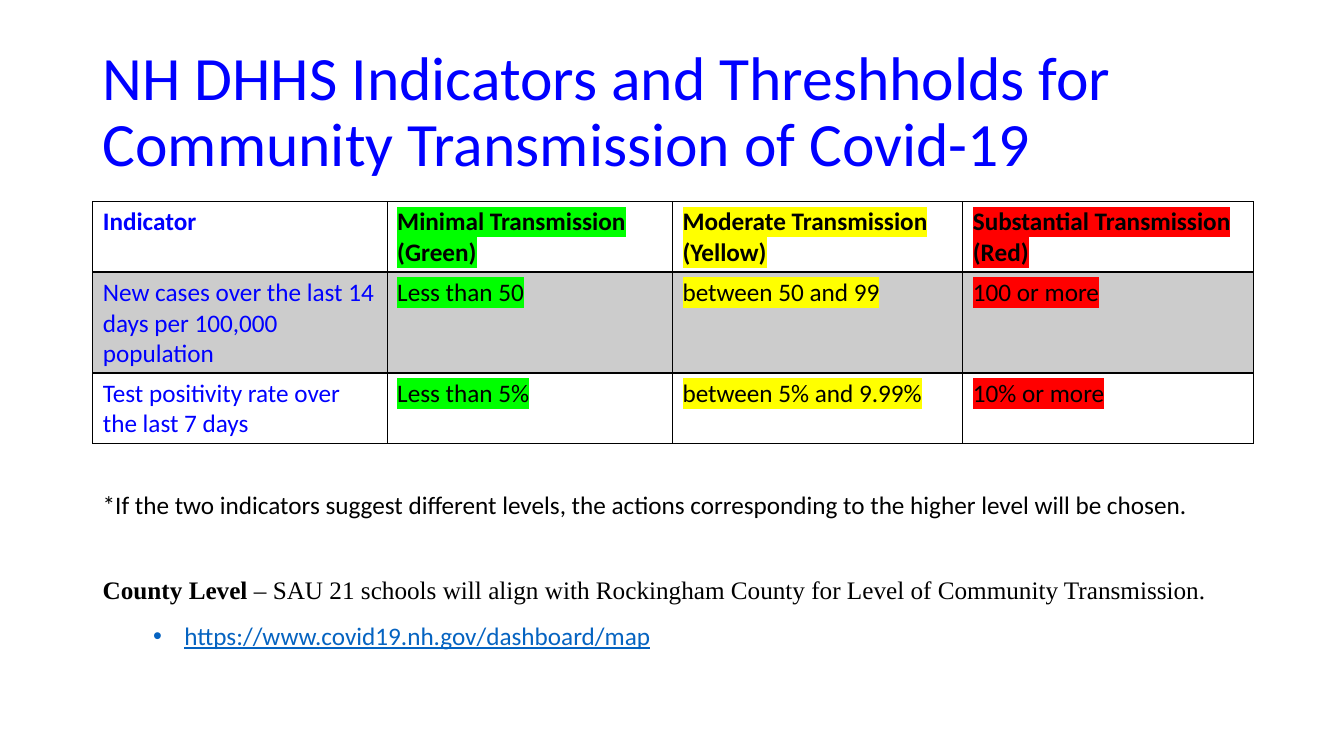
from lxml.etree import SubElement
from pptx import Presentation
from pptx.dml.color import RGBColor
from pptx.enum.text import MSO_ANCHOR as Anchor
from pptx.oxml.ns import qn
from pptx.util import Inches, Pt

BLUE, BLACK, LINK = "0000FF", "000000", "0563C1"
LEVEL_COLORS = [None, "00FF00", "FFFF00", "FF0000"]
COLUMN_WIDTHS = [2.92, 2.83, 2.88, 2.88]
ROW_HEIGHTS = [0.7, 1.0, 0.7]
INDICATORS = [
    ["Indicator", "Minimal Transmission (Green)",
     "Moderate Transmission (Yellow)", "Substantial Transmission (Red)"],
    ["New cases over the last 14 days per 100,000 population",
     "Less than 50", "between 50 and 99", "100 or more"],
    ["Test positivity rate over the last 7 days",
     "Less than 5%", "between 5% and 9.99%", "10% or more"],
]


def rgb(color):
    return RGBColor.from_string(color)


class SlideBuilder:
    font = "Calibri"
    size = 18

    def __init__(self, slide):
        self.slide = slide

    def run(self, p, text, color=BLACK, size=None, font=None, bold=False,
            underline=False, highlight=None):
        r = p.add_run()
        r.text = text
        r.font.size = Pt(size or self.size)
        r.font.bold = bold
        if underline:
            r.font.underline = True
        r.font.color.rgb = rgb(color)
        if highlight:
            # The highlight element must stand between the fill and the font
            mark = SubElement(r.font._element, qn("a:highlight"))
            SubElement(mark, qn("a:srgbClr"), val=highlight)
        r.font.name = font or self.font

    def text_box(self, left, top, width, height, anchor=Anchor.TOP):
        sp = self.slide.shapes.add_textbox(
            Inches(left), Inches(top), Inches(width), Inches(height))
        tf = sp.text_frame
        tf.word_wrap = True
        tf.vertical_anchor = anchor
        return tf

    def paragraph(self, tf, before, spacing):
        p = tf.add_paragraph()
        p.space_before = Pt(before)
        p.line_spacing = spacing
        return p

    def bullet(self, p, left, hanging):
        p.level = 1
        pPr = p._p.get_or_add_pPr()
        pPr.set("marL", str(Inches(left)))
        pPr.set("indent", str(-Inches(hanging)))
        SubElement(pPr, qn("a:buFont"), typeface="Arial")
        SubElement(pPr, qn("a:buChar"), char="•")

    def borders(self, cell, **widths):
        """Draw black cell edges; widths maps L, R, T and B to points."""
        tcPr = cell._tc.get_or_add_tcPr()
        for side, width in widths.items():
            ln = SubElement(tcPr, qn(f"a:ln{side}"), w=str(Pt(width)))
            fill = SubElement(ln, qn("a:solidFill"))
            SubElement(fill, qn("a:srgbClr"), val=BLACK)

    def shade(self, cell, color, opacity):
        cell.fill.solid()
        cell.fill.fore_color.rgb = rgb(color)
        clr = cell._tc.tcPr.find(f"{qn('a:solidFill')}/{qn('a:srgbClr')}")
        SubElement(clr, qn("a:alpha"), val=str(opacity * 1000))

    def table(self, left, top, rows, widths, heights):
        table = self.slide.shapes.add_table(
            len(rows), len(widths), Inches(left), Inches(top),
            Inches(sum(widths)), Inches(sum(heights))).table
        table.first_row = table.horz_banding = False
        for column, width in zip(table.columns, widths):
            column.width = Inches(width)
        for i, texts in enumerate(rows):
            table.rows[i].height = Inches(heights[i])
            for j, text in enumerate(texts):
                cell = table.cell(i, j)
                self.borders(cell, L=1, R=1, T=2 if i == 1 else 1,
                             B=2 if i == 0 else 1)
                if i == 1:
                    self.shade(cell, BLACK, 20)
                else:
                    cell.fill.background()
                self.run(cell.text_frame.paragraphs[0], text,
                         color=BLACK if j else BLUE, bold=i == 0,
                         highlight=LEVEL_COLORS[j])


def main():
    prs = Presentation()
    prs.slide_width, prs.slide_height = Inches(13.33), Inches(7.5)
    s = SlideBuilder(prs.slides.add_slide(prs.slide_layouts[6]))

    title = s.text_box(0.92, 0.4, 11.5, 1.45, Anchor.MIDDLE).paragraphs[0]
    title.line_spacing = 0.9
    s.run(title, "NH DHHS Indicators and Threshholds for "
          "Community Transmission of Covid-19", BLUE, size=44)

    s.table(0.92, 2, INDICATORS, COLUMN_WIDTHS, ROW_HEIGHTS)

    notes = s.text_box(0.92, 4.81, 11.49, 2.01)
    s.run(notes.paragraphs[0], "*If the two indicators suggest different levels, "
          "the actions corresponding to the higher level will be chosen.")
    county = s.paragraph(notes, before=32, spacing=1.3)
    s.run(county, "County Level", font="Times New Roman", bold=True)
    s.run(county, " – SAU 21 schools will align with Rockingham County for "
          "Level of Community Transmission.", font="Times New Roman")
    link = s.paragraph(notes, before=5, spacing=1.3)
    s.bullet(link, left=0.81, hanging=0.31)
    s.run(link, "https://www.covid19.nh.gov/dashboard/map", LINK, underline=True)

    prs.save("out.pptx")


if __name__ == "__main__":
    main()
